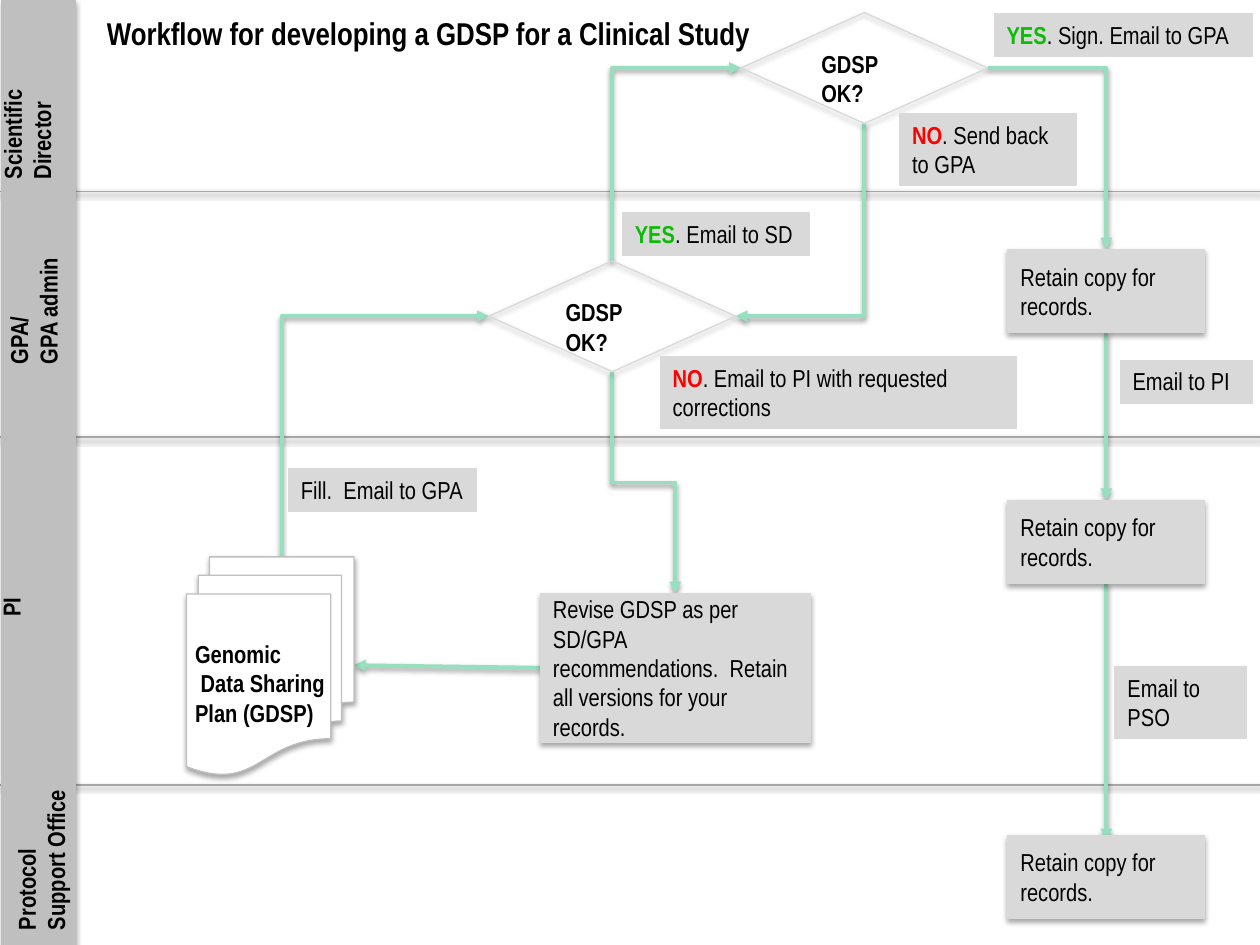
from lxml import etree
from pptx import Presentation
from pptx.dml.color import RGBColor
from pptx.enum.shapes import MSO_CONNECTOR, MSO_SHAPE
from pptx.enum.text import MSO_ANCHOR, PP_ALIGN
from pptx.oxml.ns import qn
from pptx.util import Emu, Inches, Pt

STRAIGHT, ELBOW = MSO_CONNECTOR.STRAIGHT, MSO_CONNECTOR.ELBOW
RECTANGLE, PROCESS = MSO_SHAPE.RECTANGLE, MSO_SHAPE.FLOWCHART_PROCESS
DECISION, DOCUMENTS = MSO_SHAPE.FLOWCHART_DECISION, MSO_SHAPE.FLOWCHART_MULTIDOCUMENT
TOP, MIDDLE, LEFT = MSO_ANCHOR.TOP, MSO_ANCHOR.MIDDLE, PP_ALIGN.LEFT

FONT = "Arial Narrow"
COLORS = {"text": "000000", "yes": "0BBB06", "no": "FF0000", "arrow": "96DFBF",
          "box": "D9D9D9", "lane": "BFBFBF", "divider": "A6A6A6", "paper": "FFFFFF"}
WIDTH, HEIGHT = 10, 7.5

# Content: lengths in inches on the slide
TITLE = ("Workflow for developing a GDSP for a Clinical Study", (0.75, 0.06, 5.36, 0.4))
DIVIDERS = [1.52, 3.47, 6.23]
# Lane name lines, unrotated box, wrap
LANES = [
    (["Scientific", "Director"], (-0.47, 0.55, 1.37, 0.57), True),
    (["GPA/", "GPA admin"], (-0.29, 2.15, 1.11, 0.57), False),
    (["PI"], (-0.09, 4.64, 0.36, 0.34), False),
    (["Protocol", "Support Office"], (-0.5, 6.37, 1.65, 0.57), True),
]

# Flow grid: centre columns, decision rows and record rows
DOCUMENT_X, GPA_X, REVISE_X, DIRECTOR_X, RECORD_X = 2.24, 4.86, 5.36, 6.86, 8.78
DIRECTOR_Y, GPA_Y = 0.54, 2.51
DECISION_SIZE, RECORD_SIZE = (1.96, 0.88), (1.56, 0.66)
RECORD_TOPS = [1.98, 3.97, 6.63]
DECISION_TEXT, RECORD_TEXT = "GDSP OK?", "Retain copy for records."
REVISE_TEXT = ("Revise GDSP as per SD/GPA recommendations.  "
               "Retain all versions for your records.")
REVISE_BOX = (4.29, 4.71, 2.14, 1.18)
DOCUMENT_BOX = (1.48, 4.42, 1.33, 1.73)
DOCUMENT_LINES = ["Genomic", " Data Sharing Plan (GDSP)"]
DOCUMENT_TEXT_BOX = (1.45, 5.02, 1.34, 0.81)

# Answer (coloured and bold), rest of the label, left, top, width, rows of text
LABELS = [
    ("", "Fill.  Email to GPA", 2.29, 3.72, 1.49, 1),
    ("YES", ". Email to SD", 4.94, 1.69, 1.48, 1),
    ("NO", ". Email to PI with requested corrections", 5.24, 2.83, 2.83, 2),
    ("YES", ". Sign. Email to GPA", 7.89, 0.11, 2.05, 1),
    ("NO", ". Send back to GPA", 7.14, 0.9, 1.4, 2),
    ("", "Email to PI", 8.89, 2.86, 1.05, 1),
    ("", "Email to PSO", 8.85, 5.29, 1.04, 2),
]
LABEL_HEIGHTS = {1: 0.34, 2: 0.57}

HALF_W, HALF_H = DECISION_SIZE[0] / 2, DECISION_SIZE[1] / 2
RECORD_BOTTOMS = [top + RECORD_SIZE[1] for top in RECORD_TOPS]
# Route, start, end
ARROWS = [
    ("up-across", (DOCUMENT_X, DOCUMENT_BOX[1]), (GPA_X - HALF_W, GPA_Y)),
    ("up-across", (GPA_X, GPA_Y - HALF_H), (DIRECTOR_X - HALF_W, DIRECTOR_Y)),
    ("up-across", (DIRECTOR_X, DIRECTOR_Y + HALF_H), (GPA_X + HALF_W, GPA_Y)),
    ("step", (GPA_X, GPA_Y + HALF_H), (REVISE_X, REVISE_BOX[1])),
    ("across-down", (DIRECTOR_X + HALF_W, DIRECTOR_Y), (RECORD_X, RECORD_TOPS[0])),
    ("straight", (REVISE_BOX[0], 5.3), (DOCUMENT_BOX[0] + DOCUMENT_BOX[2], 5.28)),
    ("straight", (RECORD_X, RECORD_BOTTOMS[0]), (RECORD_X, RECORD_TOPS[1])),
    ("straight", (RECORD_X, RECORD_BOTTOMS[1]), (RECORD_X, RECORD_TOPS[2] + 0.04)),
]


def rgb(name):
    return RGBColor.from_string(COLORS[name])


def add_shadow(shape, opacity, distance):
    properties = shape._element.spPr
    for old in properties.findall(qn("a:effectLst")):
        properties.remove(old)
    effects = etree.SubElement(properties, qn("a:effectLst"))
    shadow = etree.SubElement(effects, qn("a:outerShdw"), blurRad=str(Pt(3.1)),
                              dist=str(Pt(distance)), dir="5400000", rotWithShape="0")
    color = etree.SubElement(shadow, qn("a:srgbClr"), val=COLORS["text"])
    etree.SubElement(color, qn("a:alpha"), val=str(opacity * 1000))


def write(shape, paragraphs, size=14, wrap=True, anchor=TOP):
    """Each paragraph is a list of (text, colour, bold) runs."""
    frame = shape.text_frame
    frame.word_wrap = wrap
    frame.vertical_anchor = anchor
    for index, runs in enumerate(paragraphs):
        paragraph = frame.add_paragraph() if index else frame.paragraphs[0]
        paragraph.alignment = LEFT
        for text, color, bold in runs:
            run = paragraph.add_run()
            run.text = text
            run.font.name, run.font.size, run.font.bold = FONT, Pt(size), bold
            run.font.color.rgb = rgb(color)


def add_bold_text(slide, lines, box, size=14, wrap=True):
    shape = slide.shapes.add_textbox(*map(Inches, box))
    write(shape, [[(line, "text", True)] for line in lines], size, wrap)
    return shape


def add_box(slide, kind, box, fill, outline, shadow=True):
    shape = slide.shapes.add_shape(kind, *map(Inches, box))
    shape.shadow.inherit = False
    if fill:
        shape.fill.solid()
        shape.fill.fore_color.rgb = rgb(fill)
    else:
        shape.fill.background()
    shape.line.color.rgb = rgb(outline)
    shape.line.width = Pt(0.75)
    if shadow:
        add_shadow(shape, 35, 1.8)
    return shape


def add_line(slide, kind, start, end, color, width, arrow=False):
    line = slide.shapes.add_connector(kind, *(Emu(Inches(v)) for v in (*start, *end)))
    line.line.color.rgb = rgb(color)
    line.line.width = Pt(width)
    if arrow:
        etree.SubElement(line.line._get_or_add_ln(), qn("a:tailEnd"), type="triangle")
    add_shadow(line, 38, 1.6)
    return line


def add_arrow(slide, route, start, end):
    turned = route in ("up-across", "step")
    if turned:  # a quarter turn makes the elbow leave vertically
        (x1, y1), (x2, y2) = start, end
        x, y, half_dx, half_dy = (x1 + x2) / 2, (y1 + y2) / 2, (x2 - x1) / 2, (y2 - y1) / 2
        start, end = (x - half_dy, y + half_dx), (x + half_dy, y - half_dx)
    kind = STRAIGHT if route == "straight" else ELBOW
    line = add_line(slide, kind, start, end, "arrow", 2.25, arrow=True)
    properties = line._element.spPr
    if turned:
        properties.find(qn("a:xfrm")).set("rot", "5400000")
    if route in ("up-across", "across-down"):
        properties.find(qn("a:prstGeom")).set("prst", "bentConnector2")


def main():
    presentation = Presentation()
    presentation.slide_width, presentation.slide_height = Inches(WIDTH), Inches(HEIGHT)
    slide = presentation.slides.add_slide(presentation.slide_layouts[6])

    # Swim lanes
    for y in DIVIDERS:
        add_line(slide, STRAIGHT, (0, y), (WIDTH, y), "divider", 1)
    add_box(slide, RECTANGLE, (0.01, 0, 0.59, HEIGHT), "lane", "lane")
    for lines, box, wrap in LANES:
        add_bold_text(slide, lines, box, wrap=wrap).rotation = 270

    # Arrows
    for route, start, end in ARROWS:
        add_arrow(slide, route, start, end)

    # Decisions, with the text box offset from each centre
    for x, y, dx in ((GPA_X, GPA_Y, -0.47), (DIRECTOR_X, DIRECTOR_Y, -0.44)):
        add_box(slide, DECISION, (x - HALF_W, y - HALF_H, *DECISION_SIZE), None, "box")
        add_bold_text(slide, [DECISION_TEXT], (x + dx, y - 0.2, 0.9, 0.57))

    # Process steps and documents
    steps = [(REVISE_TEXT, REVISE_BOX)]
    steps += [(RECORD_TEXT, (RECORD_X - RECORD_SIZE[0] / 2, top, *RECORD_SIZE))
              for top in RECORD_TOPS]
    for text, box in steps:
        shape = add_box(slide, PROCESS, box, "box", "box")
        write(shape, [[(text, "text", False)]], anchor=MIDDLE)
    add_box(slide, DOCUMENTS, DOCUMENT_BOX, "paper", "lane")
    add_bold_text(slide, DOCUMENT_LINES, DOCUMENT_TEXT_BOX)

    # Labels beside the arrows
    for answer, text, left, top, width, rows in LABELS:
        box = (left, top, width, LABEL_HEIGHTS[rows])
        shape = add_box(slide, RECTANGLE, box, "box", "box", shadow=False)
        runs = [(answer, answer.lower(), True)] if answer else []
        write(shape, [runs + [(text, "text", False)]], wrap=rows > 1)

    # Title
    add_bold_text(slide, [TITLE[0]], TITLE[1], size=18, wrap=False)
    presentation.save("out.pptx")


if __name__ == "__main__":
    main()
